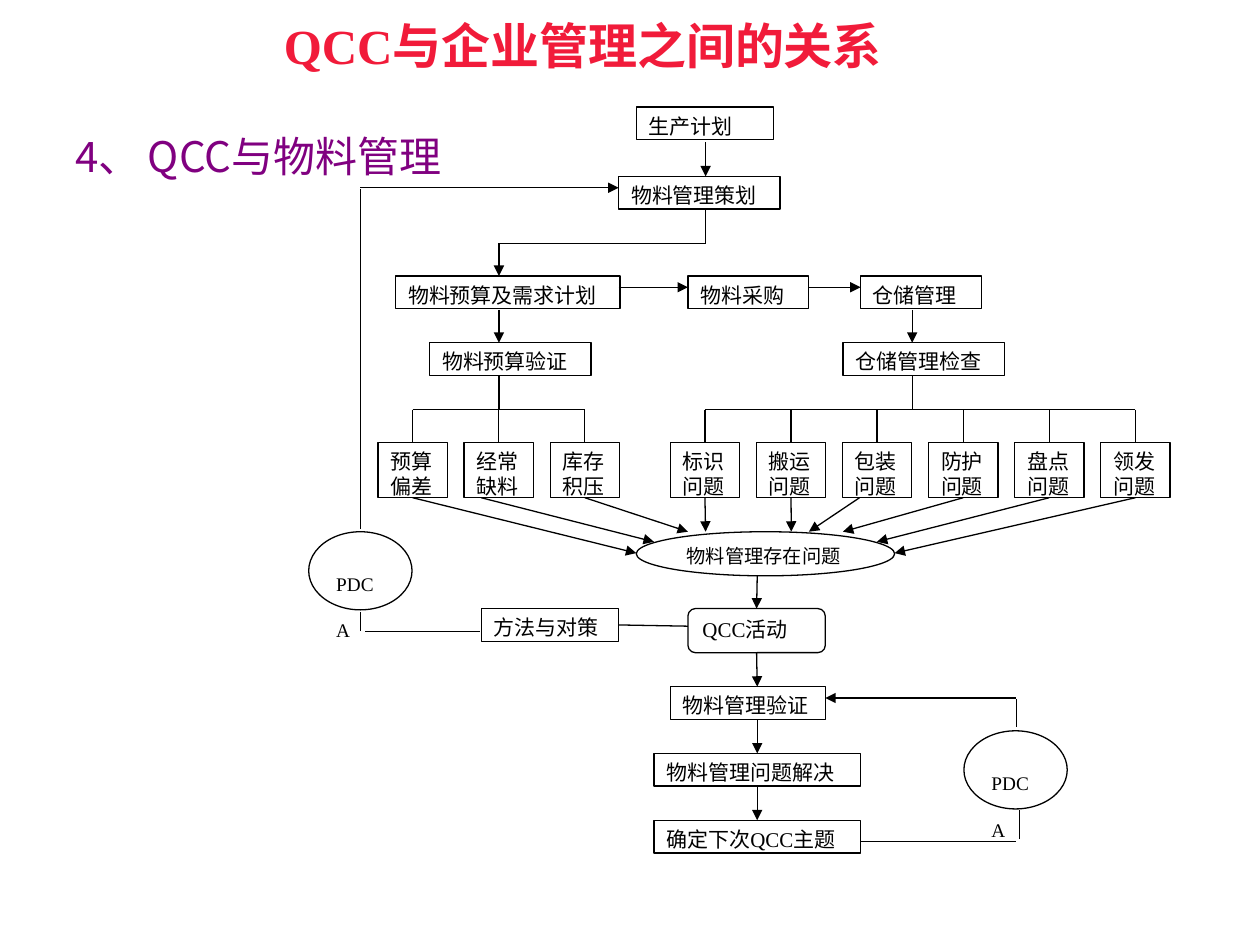
from lxml.etree import SubElement as Sub
from pptx import Presentation
from pptx.dml.color import RGBColor as Rgb
from pptx.enum.shapes import MSO_CONNECTOR as Conn, MSO_SHAPE as Shape
from pptx.enum.text import MSO_ANCHOR as Anchor, MSO_AUTO_SIZE as Auto, PP_ALIGN as Align
from pptx.oxml.ns import qn
from pptx.util import Inches, Pt

HUES = {"ink": "000000", "title": "F11B3A", "head": "800080"}
SERIF, SANS = "Times New Roman", "Noto Sans CJK SC"
TOP, LEFT, BOTTOM, RIGHT = range(4)


def style(font, size, name, hue="ink", bold=False):
    font.size, font.name, font.bold = Pt(size), name, bold
    font.color.rgb = Rgb.from_string(HUES[hue])


def node(pane, text, x, y, w, h=0.26, kind=Shape.RECTANGLE, size=12, space=None):
    """Outlined shape with text; x and y count from the pane's corner."""
    shapes, left, top = pane
    item = shapes.add_shape(kind, *map(Inches, (left + x, top + y, w, h)))
    item.shadow.inherit = False
    item.fill.background()
    item.line.color.rgb = Rgb.from_string(HUES["ink"])
    item.line.width = Pt(0.75)
    frame = item.text_frame
    frame.word_wrap = True
    frame.vertical_anchor = Anchor.TOP
    frame.text = text
    for para in frame.paragraphs:
        para.alignment = Align.JUSTIFY
        if space:
            para.line_spacing = space
        style(para.font, size, SERIF)
    return item


def line(pane, start, end, arrow=False, tie=None, join=None):
    """Line between two points; tie and join are (shape, side) for its ends."""
    shapes, left, top = pane
    spots = [Inches(v) for x, y in (start, end) for v in (left + x, top + y)]
    item = shapes.add_connector(Conn.STRAIGHT, *spots)
    item.line.color.rgb = Rgb.from_string(HUES["ink"])
    item.line.width = Pt(0.75)
    if tie:
        item.begin_connect(*tie)
    if join:
        item.end_connect(*join)
    if arrow:
        Sub(item.line._get_or_add_ln(), qn("a:tailEnd"), type="triangle")
    Sub(item._element.spPr, qn("a:effectLst"))


def title(slide, x, y, w, h):
    item = slide.shapes.title
    item.left, item.top, item.width, item.height = map(Inches, (x, y, w, h))
    frame = item.text_frame
    frame.auto_size = Auto.NONE
    frame.vertical_anchor = Anchor.MIDDLE
    para = frame.paragraphs[0]
    para.alignment = Align.CENTER
    for text, name in (("QCC", SERIF), ("与企业管理之间的关系 ", SANS)):
        run = para.add_run()
        run.text = text
        style(run.font, 28, name, "title", True)


def heading(slide, x, y, w, h):
    frame = slide.shapes.add_textbox(*map(Inches, (x, y, w, h))).text_frame
    frame.word_wrap = True
    para = frame.paragraphs[0]
    for text, look in (("4、", (24, SANS, "head")), (" ", (18, "Arial", "ink", True)),
                       ("QCC与物料管理", (24, SANS, "head"))):
        run = para.add_run()
        run.text = text
        style(run.font, *look)


def plan(pane):
    """From the production plan down to the two checks."""
    for text, x, y, w in (
        ("生产计划", 2.05, 0, 1.09), ("物料管理策划", 1.91, 0.55, 1.28),
        ("物料预算及需求计划", 0.14, 1.34, 1.78), ("物料采购", 2.46, 1.34, 0.96),
        ("仓储管理", 3.83, 1.34, 0.96), ("物料预算验证", 0.41, 1.87, 1.28),
        ("仓储管理检查", 3.69, 1.87, 1.28),
    ):
        node(pane, text, x, y, w)
    line(pane, (2.6, 0.28), (2.6, 0.55), True)
    line(pane, (2.6, 0.81), (2.6, 1.08))
    line(pane, (0.96, 1.08), (2.6, 1.08))
    line(pane, (0.96, 1.08), (0.96, 1.34), True)
    for x, end in ((1.91, 2.46), (3.42, 3.83)):
        line(pane, (x, 1.43), (end, 1.43), True)
    for x in (0.96, 4.24):
        line(pane, (x, 1.61), (x, 1.87), True)


def fan(pane, stem, items):
    """Row of problems under a rail; an item is text, start shift, arrow end."""
    step, wide, rail, row, high = 2.05 / 3, 0.55, 0.27, 0.53, 0.44
    mids = [wide / 2 + i * step for i in range(len(items))]
    line(pane, (stem, 0), (stem, rail))
    line(pane, (mids[0], rail), (mids[-1], rail))
    for mid, (text, shift, end) in zip(mids, items):
        item = node(pane, text.replace(" ", "\n"), mid - wide / 2, row, wide, high)
        line(pane, (mid, rail), (mid, row), join=(item, TOP))
        line(pane, (mid + shift, row + high), end, True,
             tie=None if shift else (item, BOTTOM))


def solve(pane):
    """From the problems found down to the next theme."""
    mid = 2.19
    node(pane, "物料管理存在问题", 1.23, 0, 2.05, 0.35, Shape.OVAL, 11)
    way = node(pane, "方法与对策", 0, 0.61, 1.09)
    work = node(pane, "QCC活动", 1.64, 0.61, 1.09, 0.35, Shape.ROUNDED_RECTANGLE)
    node(pane, "物料管理验证", 1.5, 1.23, 1.23)
    fix = node(pane, "物料管理问题解决", 1.37, 1.76, 1.64)
    topic = node(pane, "确定下次QCC主题", 1.37, 2.29, 1.64)
    line(pane, (1.09, 0.75), (1.64, 0.75), tie=(way, RIGHT))
    line(pane, (mid, 0.35), (mid, 0.61), True, join=(work, TOP))
    line(pane, (mid, 0.96), (mid, 1.23), True, tie=(work, BOTTOM))
    line(pane, (mid, 1.49), (mid, 1.76), True, join=(fix, TOP))
    line(pane, (mid, 2.02), (mid, 2.29), True, (fix, BOTTOM), (topic, TOP))


def loop(pane, lines):
    """PDCA circle with its feedback lines."""
    node(pane, "PDCA", 0, 0, 0.82, 0.62, Shape.OVAL, 11, 2)
    for ends in lines:
        line(pane, *ends)


def main():
    deck = Presentation()
    deck.slide_width, deck.slide_height = Inches(10), Inches(7.5)
    slide = deck.slides.add_slide(deck.slide_layouts[5])
    shapes = slide.shapes
    title(slide, 1.67, 0.16, 6, 0.4)
    heading(slide, 0.5, 0.99, 4.17, 0.5)
    plan((shapes, 3, 0.85))
    fan((shapes, 3, 2.98), 0.96, (
        ("预算 偏差", 0, (2.05, 1.41)), ("经常 缺料", -0.14, (2.19, 1.32)),
        ("库存 积压", 0, (2.46, 1.24))))
    fan((shapes, 5.32, 2.98), 1.92, (
        ("标识 问题", 0, (0.28, 1.24)), ("搬运 问题", 0, (0.96, 1.24)),
        ("包装 问题", -0.14, (1.1, 1.24)), ("防护 问题", 0, (1.37, 1.24)),
        ("盘点 问题", 0, (1.64, 1.32)), ("领发 问题", 0, (1.78, 1.41))))
    solve((shapes, 3.82, 4.22))
    loop((shapes, 2.45, 4.22), (
        ((0.41, -2.72), (0.41, -0.02)), ((0.41, -2.73), (2.46, -2.73), True),
        ((0.41, 0.64), (0.41, 0.79)), ((0.45, 0.79), (1.36, 0.79))))
    loop((shapes, 7.65, 5.8), (
        ((0.41, -0.26), (-1.1, -0.26), True), ((0.42, -0.25), (0.42, -0.03)),
        ((0.44, 0.63), (0.44, 0.86)), ((-0.82, 0.88), (0.41, 0.88))))
    deck.save("out.pptx")


if __name__ == "__main__":
    main()
